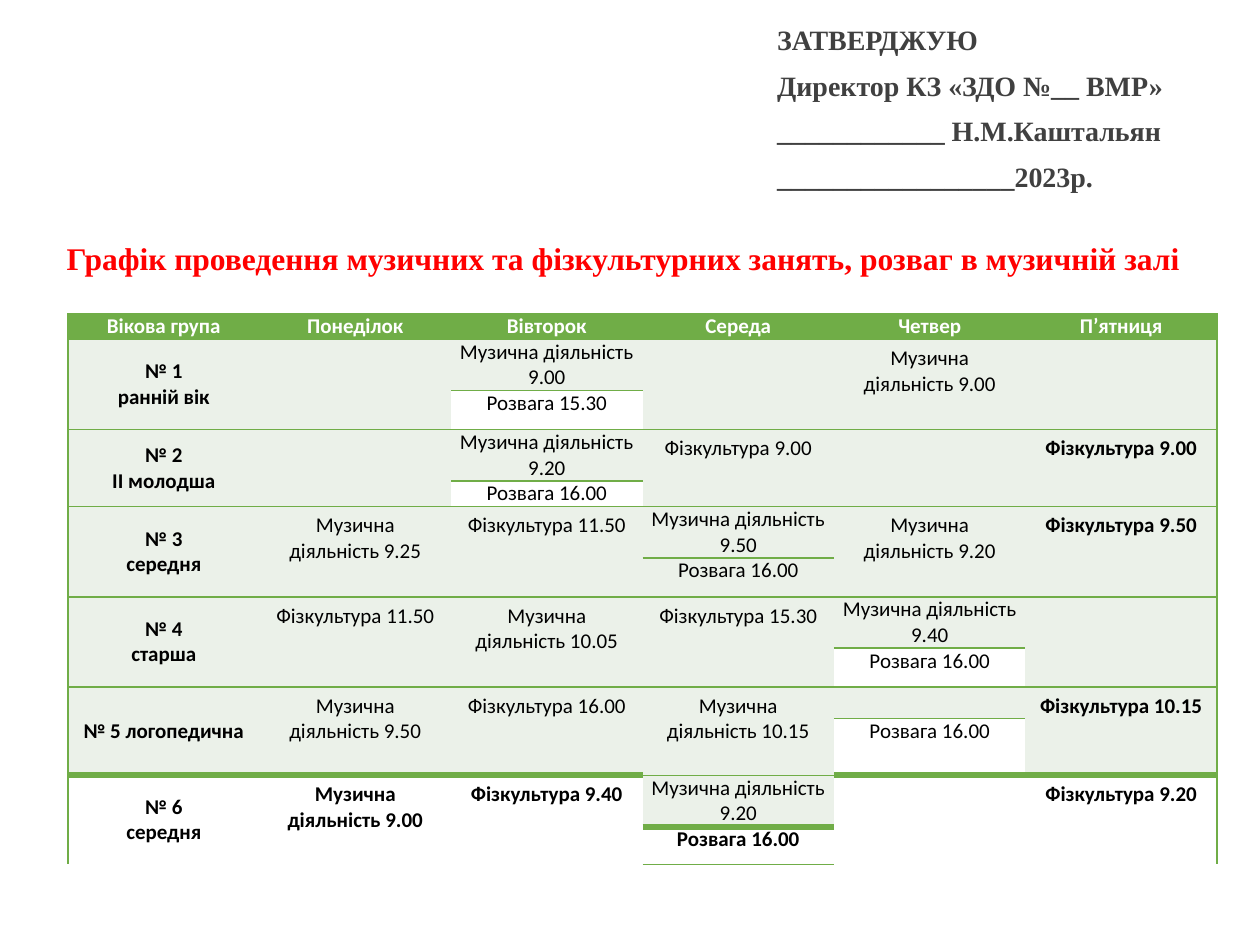
from dataclasses import dataclass

from lxml.etree import SubElement
from pptx import Presentation
from pptx.dml.color import RGBColor
from pptx.enum.text import MSO_ANCHOR as Anchor, PP_ALIGN as Align
from pptx.oxml.ns import qn
from pptx.util import Inches, Pt


@dataclass(frozen=True)
class Theme:
    green: str = "70AD47"
    pale: str = "EBF1E9"
    white: str = "FFFFFF"
    black: str = "000000"
    red: str = "FF0000"
    gray: str = "404040"
    serif: str = "Times New Roman"
    sans: str = "Calibri"
    title_size: int = 18
    approval_size: int = 16
    table_size: int = 12
    thin: int = 1
    thick: int = 4


THEME = Theme()
NO_STYLE = "{2D5ABB26-0587-4C30-8999-92F81FD0307C}"
COLUMN_WIDTH = 1.52
HEADER_HEIGHT = 0.2

APPROVAL = [
    "ЗАТВЕРДЖУЮ",
    "Директор КЗ «ЗДО №__ ВМР»",
    "____________ Н.М.Каштальян",
    "_________________2023р.",
]
TITLE = "Графік проведення музичних та фізкультурних занять, розваг в музичній залі"
HEADINGS = ["Вікова група", "Понеділок", "Вівторок", "Середа", "Четвер", "П’ятниця"]
MUSIC = "Музична діяльність"
SPORT = "Фізкультура"
FUN = "Розвага"

# Each group: two row heights, then six cells; a pair is a cell split in two.
GROUPS = [
    ((0.4, 0.31), ["№ 1\nранній вік", "", (f"{MUSIC} 9.00", f"{FUN} 15.30"),
                   "", f"{MUSIC} 9.00", ""]),
    ((0.4, 0.2), ["№ 2\nІІ молодша", "", (f"{MUSIC} 9.20", f"{FUN} 16.00"),
                  f"{SPORT} 9.00", "", f"{SPORT} 9.00"]),
    ((0.4, 0.31), ["№ 3\nсередня", f"{MUSIC} 9.25", f"{SPORT} 11.50",
                   (f"{MUSIC} 9.50", f"{FUN} 16.00"), f"{MUSIC} 9.20", f"{SPORT} 9.50"]),
    ((0.4, 0.31), ["№ 4\nстарша", f"{SPORT} 11.50", f"{MUSIC} 10.05",
                   f"{SPORT} 15.30", (f"{MUSIC} 9.40", f"{FUN} 16.00"), ""]),
    ((0.25, 0.45), ["№ 5 логопедична", f"{MUSIC} 9.50", f"{SPORT} 16.00",
                    f"{MUSIC} 10.15", ("", f"{FUN} 16.00"), f"{SPORT} 10.15"]),
    ((0.4, 0.3), ["№ 6\nсередня", f"{MUSIC} 9.00", f"{SPORT} 9.40",
                  (f"{MUSIC} 9.20", f"{FUN} 16.00"), "", f"{SPORT} 9.20"]),
]


def style_font(font, size, name, color, bold):
    for key, value in {"size": Pt(size), "name": name, "bold": bold}.items():
        setattr(font, key, value)
    font.color.rgb = RGBColor.from_string(color)


def write_lines(frame, lines, size, name, color, bold, **para_format):
    for index, line in enumerate(lines):
        para = frame.paragraphs[0] if index == 0 else frame.add_paragraph()
        for key, value in para_format.items():
            if not (index == 0 and key == "space_before"):
                setattr(para, key, value)
        if line:
            span = para.add_run()
            span.text = line
            style_font(span.font, size, name, color, bold)
        else:
            SubElement(para._p, qn("a:endParaRPr"), sz=str(size * 100))


def add_text(page, place, lines, size, color, wrap=True, anchor=Anchor.TOP, **para_format):
    box = page.shapes.add_textbox(*map(Inches, place))
    frame = box.text_frame
    frame.word_wrap = wrap
    frame.vertical_anchor = anchor
    write_lines(frame, lines, size, THEME.serif, color, True, **para_format)
    return box


def set_borders(cell, **widths):
    """Draw the named sides (L, R, T, B) in green; leave the others bare."""
    props = cell._tc.get_or_add_tcPr()
    for side in "LRTB":
        width = widths.get(side, 0)
        line = SubElement(props, qn(f"a:ln{side}"), w=str(Pt(width)))
        if width:
            fill = SubElement(line, qn("a:solidFill"))
            SubElement(fill, qn("a:srgbClr"), val=THEME.green)
        else:
            SubElement(line, qn("a:noFill"))


def fill_cell(cell, text, fill, color=THEME.black, bold=False, middle=False, inset=(0.06, 0)):
    side, edge = map(Inches, inset)
    layout = {
        "margin_left": side, "margin_right": side,
        "margin_top": edge, "margin_bottom": edge,
        "vertical_anchor": Anchor.MIDDLE if middle else Anchor.TOP,
    }
    for key, value in layout.items():
        setattr(cell, key, value)
    cell.fill.solid()
    cell.fill.fore_color.rgb = RGBColor.from_string(fill)
    write_lines(cell.text_frame, text.split("\n"), THEME.table_size, THEME.sans,
                color, bold, alignment=Align.CENTER)


def fill_group(table, row, entries, last):
    final_column = len(entries) - 1
    for column, entry in enumerate(entries):
        upper, lower = table.cell(row, column), table.cell(row + 1, column)
        split = isinstance(entry, tuple)
        sides = {"L": THEME.thin if column == 0 else 0,
                 "R": THEME.thin if column == final_column else 0}
        rule = THEME.thick if last else THEME.thin
        top = THEME.thin if split else rule
        middle = rule if split else 0
        set_borders(upper, T=top, B=middle, **sides)
        set_borders(lower, T=middle, B=THEME.thin, **sides)
        if split:
            # The third group alone keeps its lower half tinted.
            tinted = row == 5
            fill_cell(upper, entry[0], THEME.pale)
            fill_cell(lower, entry[1], THEME.pale if tinted else THEME.white, bold=last)
        else:
            upper.merge(lower)
            fill_cell(upper, entry, THEME.white if last else THEME.pale,
                      bold=last or column in (0, final_column),
                      middle=column == 0, inset=(0.11, 0.05))


def add_schedule(page):
    heights = [HEADER_HEIGHT] + [height for pair, _ in GROUPS for height in pair]
    columns = len(HEADINGS)
    place = (0.54, 2.49, COLUMN_WIDTH * columns, sum(heights))
    table = page.shapes.add_table(len(heights), columns, *map(Inches, place)).table
    table.first_row = table.horz_banding = False
    table._tbl.tblPr.find(qn("a:tableStyleId")).text = NO_STYLE
    for column in table.columns:
        column.width = Inches(COLUMN_WIDTH)
    for row, height in zip(table.rows, heights):
        row.height = Inches(height)
    for column, heading in enumerate(HEADINGS):
        cell = table.cell(0, column)
        set_borders(cell, T=THEME.thin, B=THEME.thin,
                    L=THEME.thin if column == 0 else 0,
                    R=THEME.thin if column == columns - 1 else 0)
        fill_cell(cell, heading, THEME.green, THEME.white, bold=True, middle=True)
    for index, (_, entries) in enumerate(GROUPS):
        fill_group(table, 1 + 2 * index, entries, last=index == len(GROUPS) - 1)


def add_approval(page):
    box = add_text(page, (6.02, 0.13, 3.91, 1.72), APPROVAL, THEME.approval_size,
                   THEME.gray, space_before=Pt(3.8), space_after=Pt(3))
    for para in box.text_frame.paragraphs:
        props = para._p.get_or_add_pPr()
        props.set("marL", str(Inches(0.25)))
        props.set("indent", str(Inches(-0.2)))


def main():
    deck = Presentation()
    deck.slide_width, deck.slide_height = Inches(10), Inches(7.5)
    page = deck.slides.add_slide(deck.slide_layouts[6])
    add_schedule(page)
    add_text(page, (0.43, 1.85, 9.13, 0.4), [TITLE], THEME.title_size, THEME.red,
             wrap=False, anchor=Anchor.MIDDLE)
    add_approval(page)
    deck.save("out.pptx")


if __name__ == "__main__":
    main()
